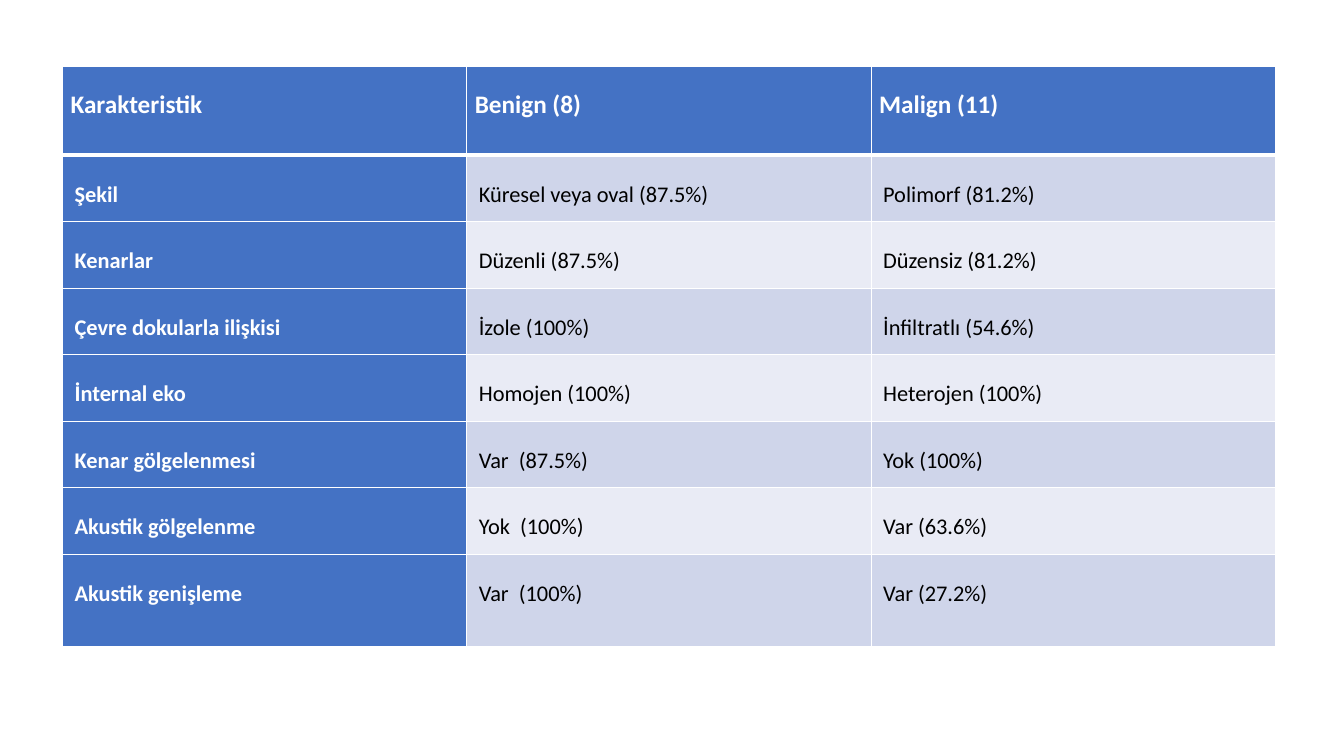
from lxml import etree
from pptx import Presentation
from pptx.dml.color import RGBColor
from pptx.enum.text import PP_ALIGN
from pptx.oxml.ns import qn
from pptx.util import Inches, Pt

HEADER = ("Karakteristik", "Benign (8)", "Malign (11)")
FINDINGS = [
    ("Şekil", "Küresel veya oval (87.5%)", "Polimorf (81.2%)"),
    ("Kenarlar", "Düzenli (87.5%)", "Düzensiz (81.2%)"),
    ("Çevre dokularla ilişkisi", "İzole (100%)", "İnfiltratlı (54.6%)"),
    ("İnternal eko", "Homojen (100%)", "Heterojen (100%)"),
    ("Kenar gölgelenmesi", "Var  (87.5%)", "Yok (100%)"),
    ("Akustik gölgelenme", "Yok  (100%)", "Var (63.6%)"),
    ("Akustik genişleme", "Var  (100%)", "Var (27.2%)"),
]
ROWS = [HEADER] + FINDINGS
LAST = len(ROWS) - 1

WHITE = RGBColor(0xFF, 0xFF, 0xFF)
BLACK = RGBColor(0, 0, 0)
BLUE = RGBColor(0x44, 0x72, 0xC4)
BANDS = (RGBColor(0xE9, 0xEB, 0xF5), RGBColor(0xCF, 0xD5, 0xEA))
JUSTIFY = PP_ALIGN.JUSTIFY

LEFT, TOP, COLUMN_WIDTH = 0.62, 0.66, 4.01
HEADER_HEIGHT, ROW_HEIGHT, LAST_HEIGHT = 0.88, 0.66, 0.92
HEADER_INSET, BODY_INSET = 0.08, 0.12
THIN, THICK = 1, 3


def add_border(cell, side, width):
    line = etree.SubElement(cell._tc.get_or_add_tcPr(), qn("a:" + side), w=str(Pt(width)))
    fill = etree.SubElement(line, qn("a:solidFill"))
    etree.SubElement(fill, qn("a:srgbClr"), val=str(WHITE))


def format_cell(cell, text, row, column):
    is_header = row == 0
    is_label = is_header or column == 0
    inset = Inches(HEADER_INSET if is_header else BODY_INSET)
    cell.margin_left = cell.margin_right = cell.margin_top = inset
    cell.margin_bottom = inset if row in (0, LAST) else 0

    add_border(cell, "lnL", THIN)
    add_border(cell, "lnR", THIN)
    add_border(cell, "lnT", THICK if row == 1 else THIN)
    add_border(cell, "lnB", THICK if is_header else THIN)
    cell.fill.solid()
    cell.fill.fore_color.rgb = BLUE if is_label else BANDS[row % 2]

    cell.text = text
    paragraph = cell.text_frame.paragraphs[0]
    paragraph.alignment = JUSTIFY
    paragraph.line_spacing = 1.5
    paragraph.space_after = Pt(10)
    paragraph.font.name = "Calibri"
    paragraph.font.size = Pt(18 if is_header else 16)
    paragraph.font.bold = is_label
    paragraph.font.color.rgb = WHITE if is_label else BLACK


def main():
    presentation = Presentation()
    presentation.slide_width = Inches(13.33)
    presentation.slide_height = Inches(7.5)
    slide = presentation.slides.add_slide(presentation.slide_layouts[6])

    heights = [HEADER_HEIGHT] + [ROW_HEIGHT] * (LAST - 1) + [LAST_HEIGHT]
    findings_table = slide.shapes.add_table(
        len(ROWS), len(HEADER), Inches(LEFT), Inches(TOP),
        Inches(COLUMN_WIDTH * len(HEADER)), Inches(sum(heights)),
    ).table
    for column in findings_table.columns:
        column.width = Inches(COLUMN_WIDTH)
    for row, (texts, height) in enumerate(zip(ROWS, heights)):
        findings_table.rows[row].height = Inches(height)
        for column, text in enumerate(texts):
            format_cell(findings_table.cell(row, column), text, row, column)

    presentation.save("out.pptx")


if __name__ == "__main__":
    main()
